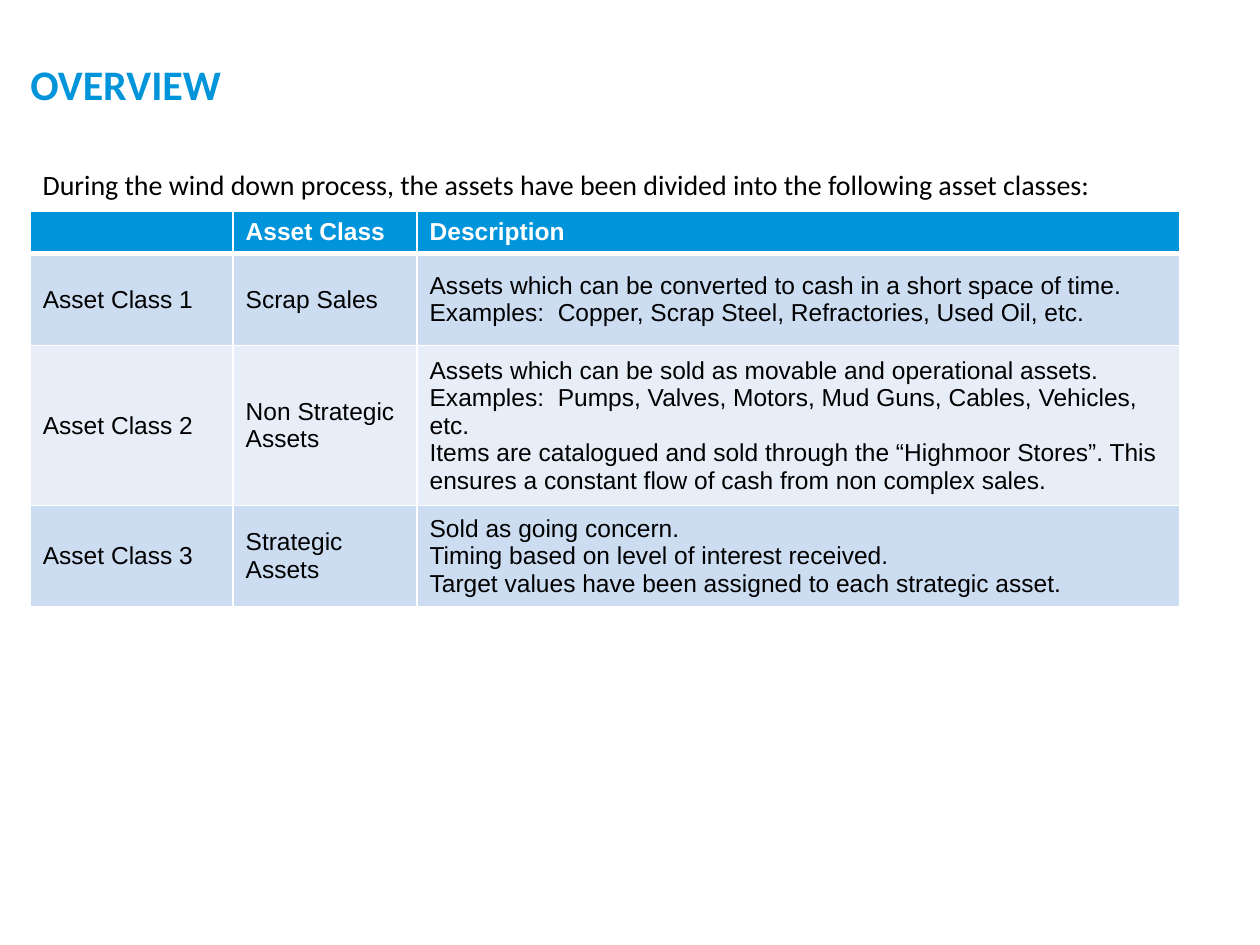
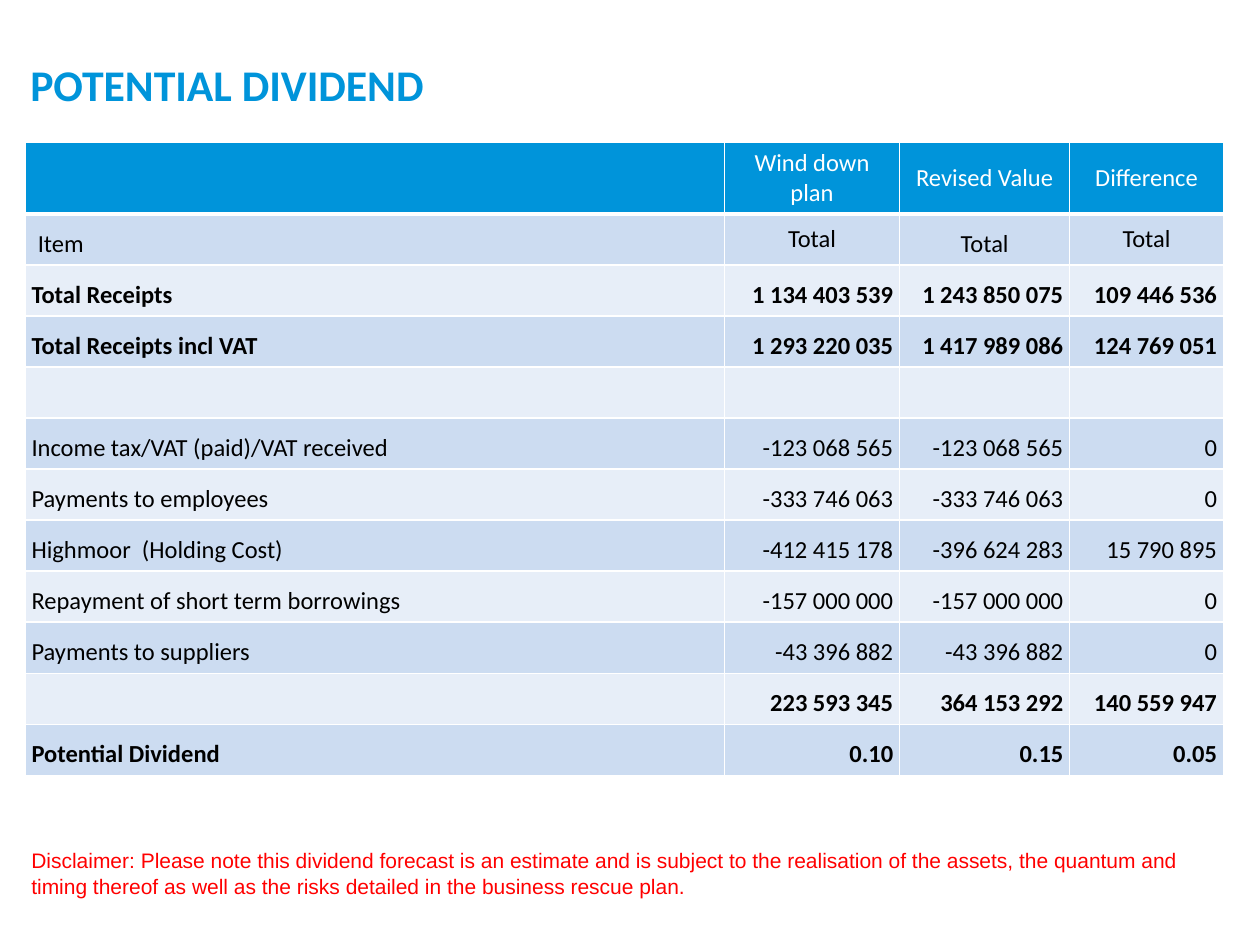
from lxml.etree import SubElement
from pptx import Presentation
from pptx.dml.color import RGBColor
from pptx.enum.text import MSO_ANCHOR, PP_ALIGN
from pptx.oxml.ns import qn
from pptx.util import Inches, Pt

# Slide grid: 100 columns by 75 rows of square cells
COLUMNS, ROWS = 100, 75
SLIDE_WIDTH, SLIDE_HEIGHT = Inches(10), Inches(7.5)

BLUE, WHITE, BLACK, RED = "0094DA", "FFFFFF", "000000", "FF0000"
BANDS = ("CCDCF1", "E7EEF8")
TITLE_BOX = (2.4, 3.9, 76.8, 5.5)
CELL_SIZE = 14
THIN, THICK = 1, 3

ASSET_CLASSES = [
    ["", "Asset Class", "Description"],
    ["Asset Class 1", "Scrap Sales",
     "Assets which can be converted to cash in a short space of time.\n"
     "Examples:  Copper, Scrap Steel, Refractories, Used Oil, etc."],
    ["Asset Class 2", "Non Strategic Assets",
     "Assets which can be sold as movable and operational assets.\n"
     "Examples:  Pumps, Valves, Motors, Mud Guns, Cables, Vehicles, etc.\n"
     "Items are catalogued and sold through the “Highmoor Stores”. "
     "This ensures a constant flow of cash from non complex sales."],
    ["Asset Class 3", "Strategic Assets",
     "Sold as going concern.\n"
     "Timing based on level of interest received.\n"
     "Target values have been assigned to each strategic asset."],
]

DIVIDEND = [
    ["", "Wind down plan", "Revised Value", "Difference"],
    ["Item", "Total", "Total", "Total"],
    ["Total Receipts", "1 134 403 539", "1 243 850 075", "109 446 536"],
    ["Total Receipts incl VAT", "1 293 220 035", "1 417 989 086", "124 769 051"],
    ["", "", "", ""],
    ["Income tax/VAT (paid)/VAT received", "-123 068 565", "-123 068 565", "0"],
    ["Payments to employees", "-333 746 063", "-333 746 063", "0"],
    ["Highmoor  (Holding Cost)", "-412 415 178", "-396 624 283", "15 790 895"],
    ["Repayment of short term borrowings", "-157 000 000", "-157 000 000", "0"],
    ["Payments to suppliers", "-43 396 882", "-43 396 882", "0"],
    ["", "223 593 345", "364 153 292", "140 559 947"],
    ["Potential Dividend", "0.10", "0.15", "0.05"],
]
BOLD_DIVIDEND_ROWS = (2, 3, 10, 11)


def color(value):
    return RGBColor.from_string(value)


def set_attributes(target, values):
    for name, value in values.items():
        setattr(target, name, value)


def place(box):
    """Turn a box in grid columns and rows into slide lengths."""
    left, top, width, height = box
    column, row = SLIDE_WIDTH / COLUMNS, SLIDE_HEIGHT / ROWS
    return [round(length) for length in
            (left * column, top * row, width * column, height * row)]


def write(text_frame, text, font, size, text_color, bold=False,
          align=PP_ALIGN.LEFT):
    for index, line in enumerate(text.split("\n")):
        paragraph = (text_frame.add_paragraph() if index
                     else text_frame.paragraphs[0])
        paragraph.alignment = align
        if not line:
            SubElement(paragraph._p, qn("a:endParaRPr"), sz=str(size * 100))
            continue
        run = paragraph.add_run()
        run.text = line
        set_attributes(run.font, {"name": font, "size": Pt(size), "bold": bold})
        run.font.color.rgb = color(text_color)


def add_title_slide(presentation, title, size):
    slide = presentation.slides.add_slide(presentation.slide_layouts[5])
    shape = slide.shapes.title
    set_attributes(shape, dict(zip(("left", "top", "width", "height"),
                                   place(TITLE_BOX))))
    set_attributes(shape.text_frame, {
        "margin_left": 0, "margin_right": 0, "margin_top": 0,
        "margin_bottom": 0, "vertical_anchor": MSO_ANCHOR.MIDDLE})
    write(shape.text_frame, title, "Calibri", size, BLUE, bold=True)
    return slide


def add_note(slide, box, text, font, size, text_color):
    text_frame = slide.shapes.add_textbox(*place(box)).text_frame
    text_frame.word_wrap = True
    write(text_frame, text, font, size, text_color)


def set_borders(cell, row_index):
    """White rules, with a thick one under the header row."""
    widths = {"L": THIN, "R": THIN,
              "T": THICK if row_index == 1 else THIN,
              "B": THICK if row_index == 0 else THIN}
    for side, width in widths.items():
        line = SubElement(cell._tc.get_or_add_tcPr(), qn(f"a:ln{side}"),
                          w=str(Pt(width)))
        fill = SubElement(line, qn("a:solidFill"))
        SubElement(fill, qn("a:srgbClr"), val=WHITE)


def add_banded_table(slide, box, column_weights, row_weights, data, style_cell):
    """Fill the box with a table; style_cell gives (cell values, text values)."""
    left, top, width, height = place(box)
    table = slide.shapes.add_table(len(data), len(data[0]),
                                   left, top, width, height).table
    for column, weight in zip(table.columns, column_weights):
        column.width = round(width * weight / sum(column_weights))
    for row, weight in zip(table.rows, row_weights):
        row.height = round(height * weight / sum(row_weights))
    for row_index, values in enumerate(data):
        for column_index, text in enumerate(values):
            cell = table.cell(row_index, column_index)
            set_borders(cell, row_index)
            cell.fill.solid()
            cell.fill.fore_color.rgb = color(
                BANDS[(row_index - 1) % 2] if row_index else BLUE)
            cell_values, text_values = style_cell(row_index, column_index)
            set_attributes(cell, cell_values)
            write(cell.text_frame, text, size=CELL_SIZE,
                  text_color=BLACK if row_index else WHITE, **text_values)


def asset_class_style(row_index, column_index):
    header = row_index == 0
    anchor = MSO_ANCHOR.TOP if header else MSO_ANCHOR.MIDDLE
    return {"vertical_anchor": anchor}, {"font": "Arial", "bold": header}


def dividend_style(row_index, column_index):
    headings = row_index < 2
    # Headings are centred, but two of the "Item" row sit at the bottom
    middle = headings and (row_index, column_index) not in ((1, 0), (1, 2))
    inset = Inches(0.05)
    cell_values = {
        "vertical_anchor": MSO_ANCHOR.MIDDLE if middle else MSO_ANCHOR.BOTTOM,
        "margin_left": inset * 2 if (row_index, column_index) == (1, 0) else inset,
        "margin_right": inset, "margin_top": inset, "margin_bottom": inset}
    if column_index == 0:
        align = PP_ALIGN.LEFT
    else:
        align = PP_ALIGN.CENTER if headings else PP_ALIGN.RIGHT
    return cell_values, {"font": "Calibri", "align": align,
                         "bold": row_index in BOLD_DIVIDEND_ROWS}


def build_overview(presentation):
    slide = add_title_slide(presentation, "OVERVIEW", 24)
    add_note(slide, (2.4, 12.8, 95, 3.7),
             "During the wind down process, the assets have been divided "
             "into the following asset classes:", "Calibri", 16, BLACK)
    add_banded_table(slide, (2.4, 16.8, 91.2, 31.2), (16.1, 14.6, 60.5),
                     (3.3, 7.3, 12.7, 7.9), ASSET_CLASSES, asset_class_style)


def build_potential_dividend(presentation):
    slide = add_title_slide(presentation, "POTENTIAL DIVIDEND", 25)
    add_note(slide, (1.5, 66.8, 95.9, 5),
             "Disclaimer: Please note this dividend forecast is an estimate "
             "and is subject to the realisation of the assets, the quantum and "
             "timing thereof as well as the risks detailed in the business "
             "rescue plan.", "Arial", 12, RED)
    row_weights = [5.6] + [4.05] * (len(DIVIDEND) - 1)
    add_banded_table(slide, (2, 11.3, 95.1, 50.2), (55.5, 13.9, 13.5, 12.2),
                     row_weights, DIVIDEND, dividend_style)


def main():
    presentation = Presentation()
    set_attributes(presentation, {"slide_width": SLIDE_WIDTH,
                                  "slide_height": SLIDE_HEIGHT})
    build_overview(presentation)
    build_potential_dividend(presentation)
    presentation.save("out.pptx")


if __name__ == "__main__":
    main()
